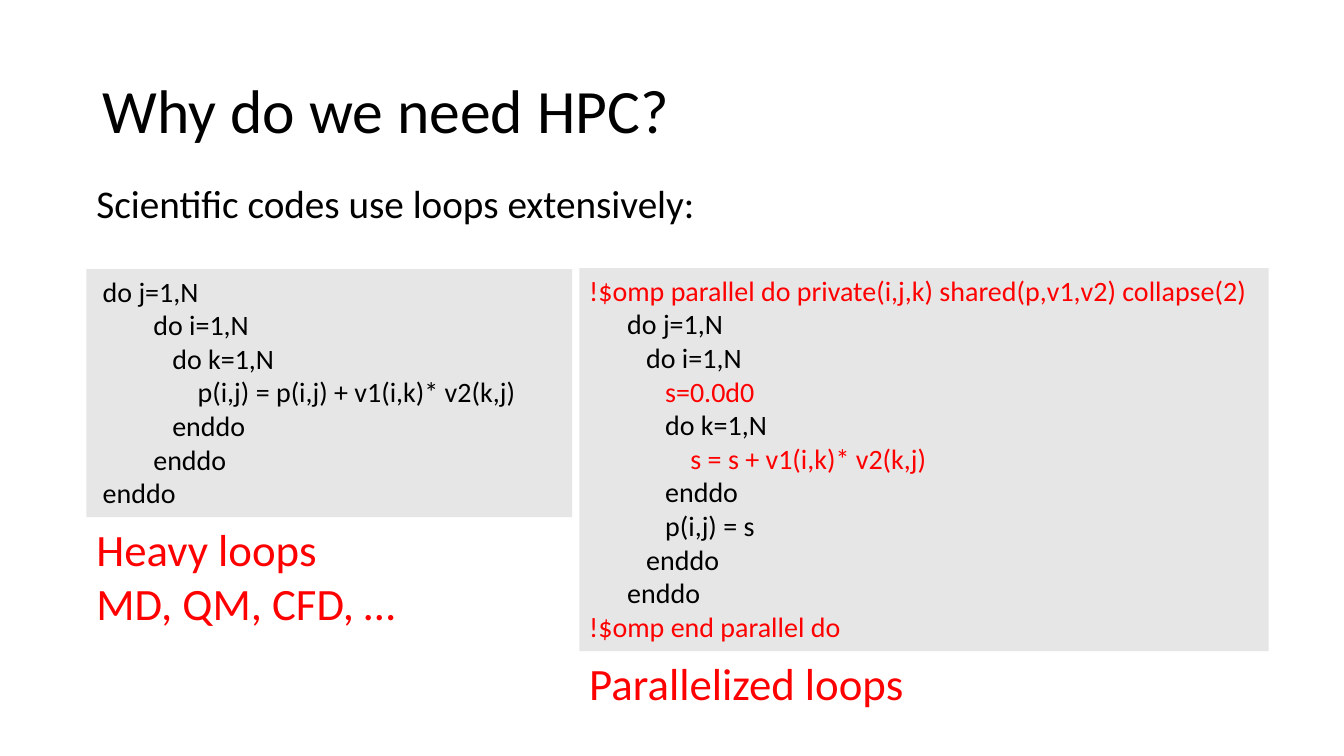
from pptx import Presentation
from pptx import util as u
from pptx.dml.color import RGBColor
from pptx.enum import shapes, text

FONT = "Calibri"
BLACK, RED, GREY = "000000", "FF0000", "E7E6E6"

SERIAL = """ do j=1,N
         do i=1,N
            do k=1,N
                p(i,j) = p(i,j) + v1(i,k)* v2(k,j)
            enddo
         enddo
 enddo"""

PARALLEL = """!$omp parallel do private(i,j,k) shared(p,v1,v2) collapse(2)
      do j=1,N
         do i=1,N
            s=0.0d0
            do k=1,N
                s = s + v1(i,k)* v2(k,j)
            enddo
            p(i,j) = s
         enddo
      enddo
!$omp end parallel do"""


def rgb(value):
    """Return the colour for a hex string."""
    return RGBColor.from_string(value)


def write(sp, content, size, color=BLACK, red_lines=()):
    """Fill a shape with left-aligned text, with chosen lines in red."""
    tf = sp.text_frame
    tf.text = content
    tf.word_wrap = True
    for i, p in enumerate(tf.paragraphs):
        p.alignment = text.PP_ALIGN.LEFT
        for r in p.runs:
            r.font.name = FONT
            r.font.size = u.Pt(size)
            r.font.color.rgb = rgb(RED if i in red_lines else color)
    return tf


def add_label(s, box, content, size, color=BLACK):
    """Add a text box in the given left, top, width, height in centimetres."""
    sp = s.shapes.add_textbox(*map(u.Cm, box))
    return write(sp, content, size, color)


def add_title(s, box, content):
    """Add the slide title, centred vertically in its box."""
    tf = add_label(s, box, content, 44)
    tf.vertical_anchor = text.MSO_ANCHOR.MIDDLE
    tf.paragraphs[0].line_spacing = 0.9


def add_code_column(s, box, code, caption, caption_height, red_lines=()):
    """Add a grey code panel with a red caption directly below it."""
    left, top, width, height = box
    sp = s.shapes.add_shape(shapes.MSO_SHAPE.RECTANGLE, *map(u.Cm, box))
    sp.shadow.inherit = False
    sp.fill.solid()
    sp.fill.fore_color.rgb = rgb(GREY)
    sp.line.fill.background()
    tf = write(sp, code, 20, red_lines=red_lines)
    tf.vertical_anchor = text.MSO_ANCHOR.TOP
    add_label(s, (left, top + height, 8.97, caption_height), caption, 32, RED)


def main():
    """Build the slide and save it."""
    prs = Presentation()
    prs.slide_width, prs.slide_height = u.Cm(33.87), u.Cm(19.05)
    s = prs.slides.add_slide(prs.slide_layouts[6])
    add_title(s, (2.34, 1.02, 29.21, 3.68), "Why do we need HPC?")
    add_label(s, (2.18, 4.39, 23.22, 1.45), "Scientific codes use loops extensively:", 28)
    add_code_column(s, (2.18, 6.78, 12.24, 6.25), SERIAL, "Heavy loops\nMD, QM, CFD, …", 3)
    add_code_column(s, (14.6, 6.76, 17.37, 9.65), PARALLEL, "Parallelized loops", 1.63,
                    red_lines=(0, 3, 5, 10))
    prs.save("out.pptx")


if __name__ == "__main__":
    main()
